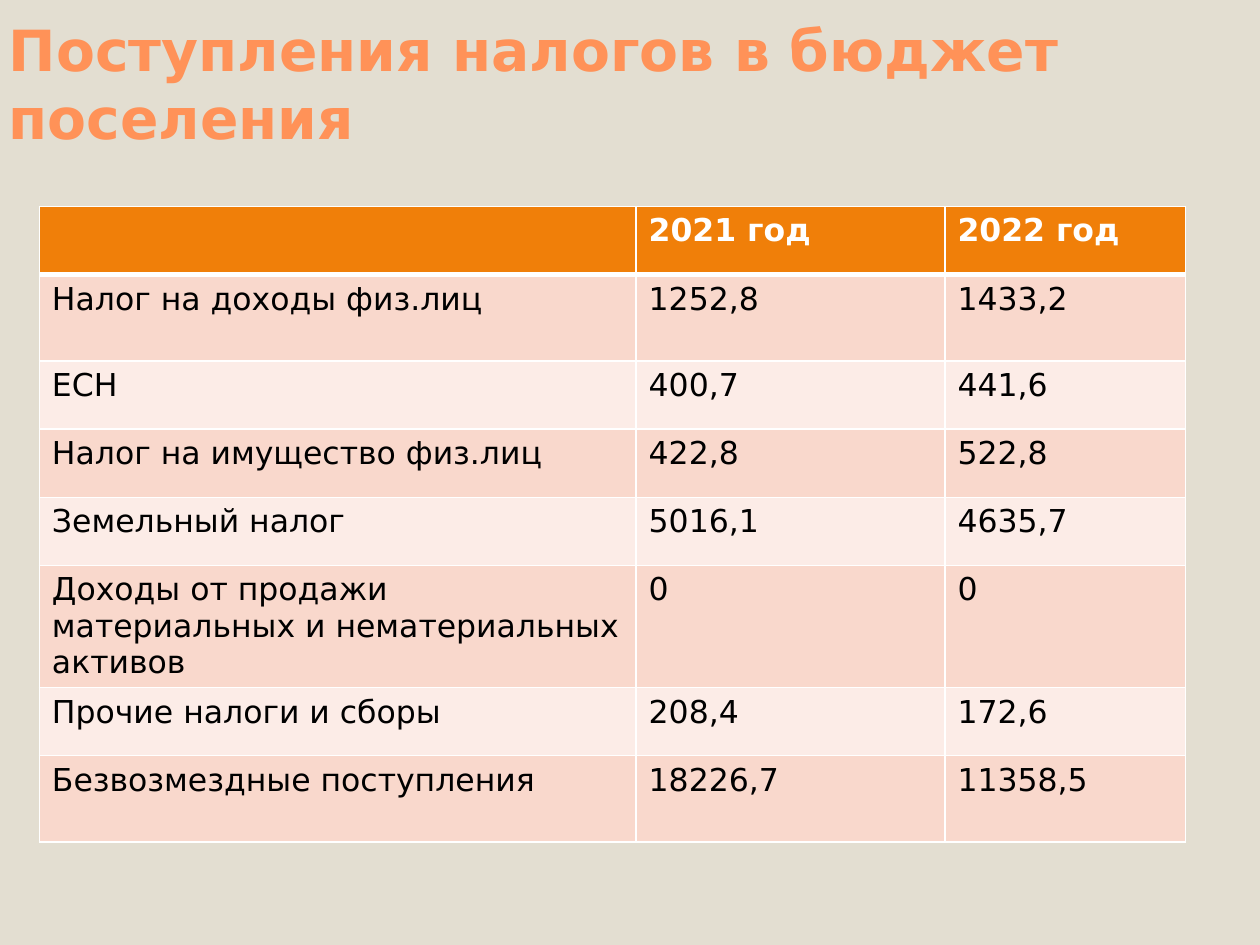
from lxml.etree import SubElement
from pptx import Presentation
from pptx.dml.color import RGBColor
from pptx.enum.text import MSO_ANCHOR, PP_ALIGN
from pptx.oxml.ns import qn
from pptx.util import Pt

# Content
TITLE = "Поступления налогов в бюджет поселения"
ROWS = [
    ("", "2021 год", "2022 год"),
    ("Налог на доходы физ.лиц", "1252,8", "1433,2"),
    ("ЕСН", "400,7", "441,6"),
    ("Налог на имущество физ.лиц", "422,8", "522,8"),
    ("Земельный налог", "5016,1", "4635,7"),
    ("Доходы от продажи материальных и нематериальных активов", "0", "0"),
    ("Прочие налоги и сборы", "208,4", "172,6"),
    ("Безвозмездные поступления", "18226,7", "11358,5"),
]

# Style
FONT = "DejaVu Sans"
BACKGROUND = RGBColor(0xE3, 0xDE, 0xD1)
TITLE_COLOR = RGBColor(0xFF, 0x92, 0x58)
HEADER_FILL = RGBColor(0xF0, 0x7F, 0x09)
BAND_FILLS = (RGBColor(0xFC, 0xEC, 0xE7), RGBColor(0xF9, 0xD8, 0xCC))
WHITE = RGBColor(0xFF, 0xFF, 0xFF)
BLACK = RGBColor(0, 0, 0)

# Table measures in points
TABLE_LEFT, TABLE_TOP = 22.5, 118
COLUMN_WIDTHS = (341, 176.5, 137.5)
ROW_HEIGHT = 38.9
TALL_ROWS = {1: 49.5, 5: 69.7, 7: 49.3}


def format_font(font, size, color, bold):
    font.name = FONT
    font.size = Pt(size)
    font.bold = bold
    font.color.rgb = color


def set_borders(cell, widths):
    """Add white cell borders; they must precede the fill in the XML."""
    properties = cell._tc.get_or_add_tcPr()
    for side, width in widths.items():
        line = SubElement(properties, qn(f"a:ln{side}"), w=str(Pt(width)))
        fill = SubElement(line, qn("a:solidFill"))
        SubElement(fill, qn("a:srgbClr"), val=str(WHITE))


presentation = Presentation()
presentation.slide_width = Pt(720)
presentation.slide_height = Pt(540)
slide = presentation.slides.add_slide(presentation.slide_layouts[5])
slide.background.fill.solid()
slide.background.fill.fore_color.rgb = BACKGROUND

# Title
title = slide.shapes.title
title.left, title.top, title.width, title.height = Pt(0), Pt(18), Pt(703.5), Pt(72)
title.text = TITLE
frame = title.text_frame
frame.word_wrap = True
frame.vertical_anchor = MSO_ANCHOR.BOTTOM
frame.margin_left = Pt(5)
paragraph = frame.paragraphs[0]
paragraph.alignment = PP_ALIGN.LEFT
format_font(paragraph.font, 32.4, TITLE_COLOR, True)

# Table
heights = [TALL_ROWS.get(index, ROW_HEIGHT) for index in range(len(ROWS))]
table = slide.shapes.add_table(
    len(ROWS), len(COLUMN_WIDTHS), Pt(TABLE_LEFT), Pt(TABLE_TOP),
    Pt(sum(COLUMN_WIDTHS)), Pt(sum(heights)),
).table
for column, width in zip(table.columns, COLUMN_WIDTHS):
    column.width = Pt(width)
for row, height in zip(table.rows, heights):
    row.height = Pt(height)

for row_index, values in enumerate(ROWS):
    header = row_index == 0
    borders = {
        "L": 1,
        "R": 1,
        "T": 3 if row_index == 1 else 1,
        "B": 3 if header else 1,
    }
    for column_index, value in enumerate(values):
        cell = table.cell(row_index, column_index)
        set_borders(cell, borders)
        cell.fill.solid()
        cell.fill.fore_color.rgb = HEADER_FILL if header else BAND_FILLS[row_index % 2]
        cell.text = value
        format_font(cell.text_frame.paragraphs[0].font, 18, WHITE if header else BLACK, header)

presentation.save("out.pptx")
